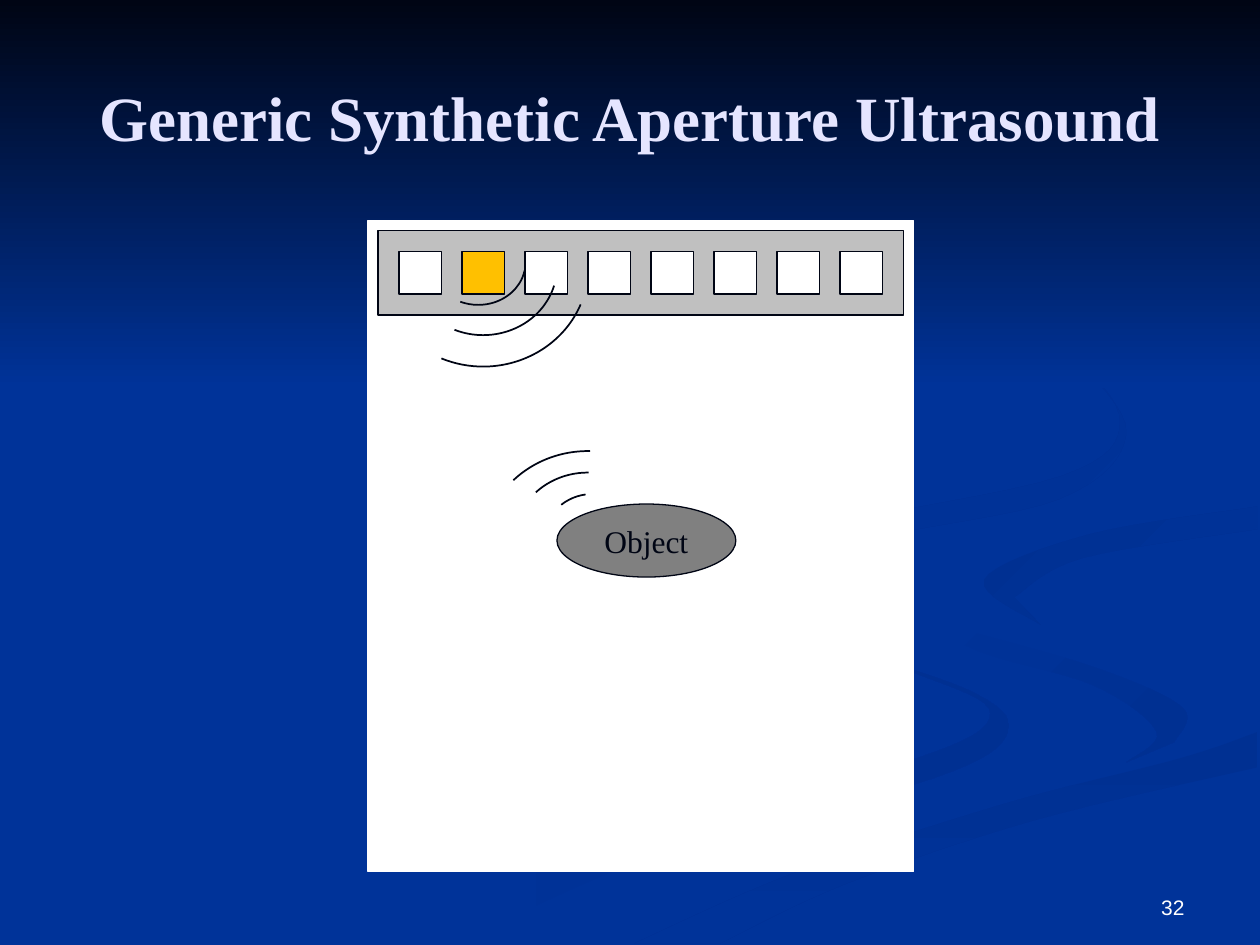
from dataclasses import dataclass
from pptx import Presentation
from pptx.dml.color import RGBColor
from pptx.enum.shapes import MSO_SHAPE as Preset
from pptx.enum.text import MSO_ANCHOR as Anchor, PP_ALIGN as Align
from pptx.util import Inches, Pt


@dataclass(frozen=True)
class Theme:
    blue: str = "003399"
    shade: str = "003092"
    navy: str = "000514"
    lavender: str = "E5E5FF"
    white: str = "FFFFFF"
    silver: str = "C0C0C0"
    grey: str = "808080"
    amber: str = "FFC000"
    serif: str = "Times New Roman"
    sans: str = "Arial"
    title_size: int = 36
    label_size: int = 18
    number_size: int = 12
    outline: float = 0.75
    wave_line: float = 1


THEME = Theme()

# Each swirl: first colour, last colour, clockwise angle, then the knots of its two edges
SWIRLS = [
    (THEME.blue, THEME.shade, 0,
     [(5.75, 4.59), (6.11, 4.99), (7.28, 5.35), (7.86, 5.66), (7.27, 6.02), (4.99, 6.61),
      (3, 7.49)],
     [(3.61, 7.49), (5.32, 6.74), (7.4, 6.18), (8, 5.81), (7.67, 5.47), (6.42, 5.07)]),
    (THEME.blue, THEME.shade, 45,
     [(7.24, 4.64), (7.66, 5.12), (8.68, 5.44), (9.18, 5.81), (8.94, 6.05)],
     [(9.32, 5.89), (9.39, 5.62), (8.7, 5.3), (7.58, 4.98)]),
    (THEME.shade, THEME.blue, 90,
     [(5.03, 7.49), (6.3, 6.93), (7.97, 6.38), (9.36, 6.02), (9.98, 5.81)],
     [(9.98, 6.09), (8.21, 6.51), (6.7, 7.02), (5.71, 7.49)]),
    (THEME.shade, THEME.blue, 45,
     [(9.98, 4.02), (8.65, 4.24), (7.81, 4.6), (8.26, 4.96)],
     [(8.05, 4.74), (8.59, 4.43), (9.98, 4.2)]),
    (THEME.shade, THEME.blue, 45,
     [(7.62, 2.33), (8.46, 2.79), (8.89, 3.35), (8.42, 3.78), (6.49, 4.2), (5.77, 4.62),
      (6.22, 5)],
     [(5.93, 4.7), (6.83, 4.3), (8.41, 3.96), (8.94, 3.44), (8.54, 2.83)]),
]
SMOOTH_STEPS = 8

ELEMENT_COUNT = 8
ACTIVE_ELEMENT = 1
# Waves: left, top, width, height within the scan area, then start and end angle in degrees
SENT_WAVES = [(0.5, 0, 0.75, 0.67, 9.65, 114.55),
              (0.33, -0.17, 1.17, 1.08, 14.69, 114.55),
              (0.08, -0.42, 1.67, 1.58, 20.97, 114.55)]
ECHO_WAVES = [(1.41, 2.17, 0.75, 0.67, 44.82, 80.07),
              (1.16, 2.0, 1.17, 1.08, 42.86, 90.68),
              (0.91, 1.83, 1.67, 1.58, 43.4, 91.32)]


def rgb(colour):
    return RGBColor.from_string(colour)


def add_text(frame, words, *, size, font, colour, bold=False, align=Align.CENTER,
             anchor=Anchor.MIDDLE):
    frame.word_wrap = True
    frame.vertical_anchor = anchor
    line = frame.paragraphs[0]
    line.alignment = align
    run = line.add_run()
    run.text = words
    run.font.size, run.font.name, run.font.bold = Pt(size), font, bold
    run.font.color.rgb = rgb(colour)


def add_preset(slide, preset, box, fill=None, line=THEME.navy, weight=THEME.outline):
    shape = slide.shapes.add_shape(preset, *map(Inches, box))
    shape.shadow.inherit = False
    if fill:
        shape.fill.solid()
        shape.fill.fore_color.rgb = rgb(fill)
    else:
        shape.fill.background()
    shape.line.color.rgb = rgb(line)
    shape.line.width = Pt(weight)
    return shape


def shade(shape, first, last, angle):
    """Fill with a linear gradient, its angle measured clockwise, and no outline."""
    shape.shadow.inherit = False
    shape.line.fill.background()
    shape.fill.gradient()
    shape.fill.gradient_angle = -angle % 360
    for stop, colour in zip(shape.fill.gradient_stops, (first, last)):
        stop.color.rgb = rgb(colour)


def smooth(knots):
    """Return points on a Catmull-Rom curve through the knots."""
    padded = [knots[0], *knots, knots[-1]]
    points = []
    for before, start, end, after in zip(padded, padded[1:], padded[2:], padded[3:]):
        for step in range(SMOOTH_STEPS):
            t = step / SMOOTH_STEPS
            points.append(tuple(
                b + t * ((c - a) + t * ((2 * a - 5 * b + 4 * c - d)
                                        + t * (3 * b - a - 3 * c + d))) / 2
                for a, b, c, d in zip(before, start, end, after)))
    return [*points, knots[-1]]


def add_backdrop(slide, box):
    left, top, _, _ = box
    slide.background.fill.solid()
    slide.background.fill.fore_color.rgb = rgb(THEME.blue)
    for first, last, angle, near_edge, far_edge in SWIRLS:
        outline = [(Inches(left + x), Inches(top + y))
                   for x, y in smooth(near_edge) + smooth(far_edge)]
        builder = slide.shapes.build_freeform(*outline[0])
        builder.add_line_segments(outline[1:], close=True)
        shade(builder.convert_to_shape(), first, last, angle)
    sky = slide.shapes.add_shape(Preset.RECTANGLE, *map(Inches, box))
    shade(sky, THEME.navy, THEME.blue, 90)


def add_title(slide, box, words):
    title = slide.shapes.title
    slide.shapes.element.append(title.element)  # in front of the backdrop
    title.left, title.top, title.width, title.height = map(Inches, box)
    add_text(title.text_frame, words, size=THEME.title_size, font=THEME.serif,
             colour=THEME.lavender, bold=True)


def add_transducer(slide, box):
    left, top, width, height = box
    add_preset(slide, Preset.RECTANGLE, box, THEME.silver)
    side, pitch = height / 2, 0.5
    first = left + (width - (ELEMENT_COUNT - 1) * pitch - side) / 2
    for i in range(ELEMENT_COUNT):
        add_preset(slide, Preset.RECTANGLE, (first + i * pitch, top + side / 2, side, side),
                   THEME.amber if i == ACTIVE_ELEMENT else THEME.white)


def add_waves(slide, box, waves, rotation=0):
    for x, y, width, height, start, end in waves:
        wave = add_preset(slide, Preset.ARC, (box[0] + x, box[1] + y, width, height),
                          weight=THEME.wave_line)
        wave.rotation = rotation
        # Angles are stored in 60000ths of a degree, adjustments in 100000ths
        wave.adjustments[0], wave.adjustments[1] = start * 0.6, end * 0.6


def add_scan_area(slide, box):
    left, top, width, _ = box
    add_preset(slide, Preset.RECTANGLE, box, THEME.white, THEME.white)
    add_transducer(slide, (left + 0.08, top + 0.08, width - 0.16, 0.67))
    target = add_preset(slide, Preset.OVAL, (left + 1.5, top + 2.25, 1.42, 0.58), THEME.grey)
    add_text(target.text_frame, "Object", size=THEME.label_size, font=THEME.serif,
             colour=THEME.navy)
    add_waves(slide, box, SENT_WAVES)
    add_waves(slide, box, ECHO_WAVES, rotation=180)


def add_page_number(slide, box, number):
    page = slide.shapes.add_textbox(*map(Inches, box))
    add_text(page.text_frame, number, size=THEME.number_size, font=THEME.sans,
             colour=THEME.white, align=Align.RIGHT, anchor=Anchor.BOTTOM)


def main():
    deck = Presentation()
    deck.slide_width, deck.slide_height = Inches(10), Inches(7.5)
    slide = deck.slides.add_slide(deck.slide_layouts[5])
    add_backdrop(slide, (0, 0, 10, 3.08))
    add_title(slide, (0.5, 0.3, 9, 1.25), "Generic Synthetic Aperture Ultrasound")
    add_scan_area(slide, (2.92, 1.75, 4.33, 5.17))
    add_page_number(slide, (7.17, 6.83, 2.33, 0.52), "32")
    deck.save("out.pptx")


if __name__ == "__main__":
    main()
